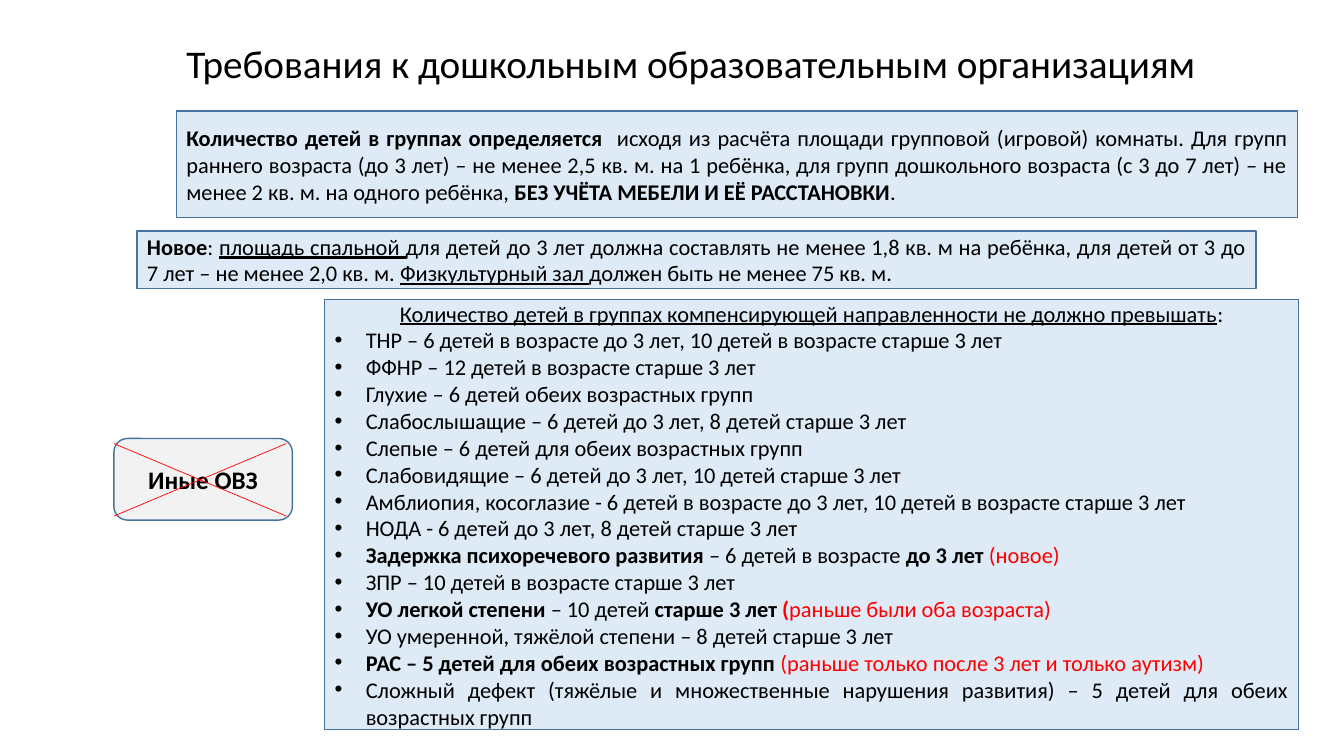
from dataclasses import dataclass

import lxml.etree
import pptx
import pptx.dml.color
import pptx.enum.shapes
import pptx.enum.text
import pptx.oxml.ns
import pptx.util

Inches = pptx.util.Inches
Align = pptx.enum.text.PP_ALIGN
Preset = pptx.enum.shapes.MSO_SHAPE

COLORS = {
    "text": "000000",
    "accent": "FF0000",
    "panel": "DEEBF7",
    "badge": "F2F2F2",
    "border": "43739E",
}
FONT = "Calibri"
BULLET_INDENT = Inches(0.31)


@dataclass
class Run:
    text: str
    bold: bool = False
    underline: bool = False
    color: str = "text"


@dataclass
class Line:
    runs: list[Run]
    align: Align = Align.JUSTIFY
    bullet: bool = False
    spacing: float = 1.0


@dataclass
class Panel:
    left: float
    top: float
    width: float
    height: float
    lines: list[Line]
    size: int = 16
    preset: Preset = Preset.RECTANGLE
    fill: str = "panel"


def rgb(name: str) -> pptx.dml.color.RGBColor:
    return pptx.dml.color.RGBColor.from_string(COLORS[name])


def add_bullet(paragraph) -> None:
    properties = paragraph._p.get_or_add_pPr()
    properties.set("marL", str(BULLET_INDENT))
    properties.set("indent", str(-BULLET_INDENT))
    font = lxml.etree.SubElement(properties, pptx.oxml.ns.qn("a:buFont"))
    font.set("typeface", "Arial")
    character = lxml.etree.SubElement(properties, pptx.oxml.ns.qn("a:buChar"))
    character.set("char", "•")


def write_lines(text_frame, lines: list[Line], size: int) -> None:
    text_frame.word_wrap = True
    text_frame.vertical_anchor = pptx.enum.text.MSO_ANCHOR.MIDDLE
    for index, line in enumerate(lines):
        paragraph = text_frame.add_paragraph() if index else text_frame.paragraphs[0]
        paragraph.alignment = line.align
        paragraph.line_spacing = line.spacing
        if line.bullet:
            add_bullet(paragraph)
        for part in line.runs:
            run = paragraph.add_run()
            run.text = part.text
            run.font.name = FONT
            run.font.size = pptx.util.Pt(size)
            run.font.bold = part.bold
            run.font.underline = part.underline
            run.font.color.rgb = rgb(part.color)


def add_panel(slide, panel: Panel) -> None:
    shape = slide.shapes.add_shape(
        panel.preset, Inches(panel.left), Inches(panel.top),
        Inches(panel.width), Inches(panel.height))
    shape.shadow.inherit = False
    shape.fill.solid()
    shape.fill.fore_color.rgb = rgb(panel.fill)
    shape.line.color.rgb = rgb("border")
    shape.line.width = pptx.util.Pt(1)
    write_lines(shape.text_frame, panel.lines, panel.size)


def add_stroke(slide, left: float, top: float, right: float, bottom: float) -> None:
    connector = slide.shapes.add_connector(
        pptx.enum.shapes.MSO_CONNECTOR.STRAIGHT,
        Inches(left), Inches(top), Inches(right), Inches(bottom))
    connector.line.color.rgb = rgb("accent")
    connector.line.width = pptx.util.Pt(0.5)
    lxml.etree.SubElement(connector._element.spPr, pptx.oxml.ns.qn("a:effectLst"))


TITLE = Line([Run("Требования к дошкольным образовательным организациям")],
             Align.LEFT, spacing=0.9)

GROUP_AREA = Line([
    Run("Количество детей в группах определяется  ", bold=True),
    Run("исходя из расчёта площади групповой (игровой) комнаты. Для групп раннего "
        "возраста (до 3 лет) – не менее 2,5 кв. м. на 1 ребёнка, для групп дошкольного "
        "возраста (с 3 до 7 лет) – не менее 2 кв. м. на одного ребёнка, "),
    Run("БЕЗ УЧЁТА МЕБЕЛИ И ЕЁ РАССТАНОВКИ", bold=True),
    Run("."),
])

NEW_AREA = Line([
    Run("Новое", bold=True),
    Run(": "),
    Run("площадь спальной ", underline=True),
    Run("для детей до 3 лет должна составлять не менее 1,8 кв. м на ребёнка, "
        "для детей от 3 до 7 лет – не менее 2,0 кв. м. "),
    Run("Физкультурный зал ", underline=True),
    Run("должен быть не менее 75 кв. м."),
])

LIMITS_HEADING = Line([
    Run("Количество детей в группах компенсирующей направленности не должно превышать",
        underline=True),
    Run(":"),
], Align.CENTER)

LIMITS = [
    [Run("ТНР – 6 детей в возрасте до 3 лет, 10 детей в возрасте старше 3 лет")],
    [Run("ФФНР – 12 детей в возрасте старше 3 лет")],
    [Run("Глухие – 6 детей обеих возрастных групп")],
    [Run("Слабослышащие – 6 детей до 3 лет, 8 детей старше 3 лет")],
    [Run("Слепые – 6 детей для обеих возрастных групп")],
    [Run("Слабовидящие – 6 детей до 3 лет, 10 детей старше 3 лет")],
    [Run("Амблиопия, косоглазие - 6 детей в возрасте до 3 лет, "
         "10 детей в возрасте старше 3 лет")],
    [Run("НОДА - 6 детей до 3 лет, 8 детей старше 3 лет")],
    [Run("Задержка психоречевого развития ", bold=True), Run("– 6 детей в возрасте "),
     Run("до 3 лет ", bold=True), Run("(новое)", color="accent")],
    [Run("ЗПР – 10 детей в возрасте старше 3 лет")],
    [Run("УО легкой степени ", bold=True), Run("– 10 детей "),
     Run("старше 3 лет ", bold=True), Run("(", bold=True, color="accent"),
     Run("раньше были оба возраста)", color="accent")],
    [Run("УО умеренной, тяжёлой степени – 8 детей старше 3 лет")],
    [Run("РАС – 5 детей для обеих возрастных групп ", bold=True),
     Run("(раньше только после 3 лет и только аутизм)", color="accent")],
    [Run("Сложный дефект (тяжёлые и множественные нарушения развития) – "
         "5 детей для обеих возрастных групп")],
]

PANELS = [
    Panel(1.75, 1.1, 11.12, 1.06, [GROUP_AREA]),
    Panel(1.36, 2.29, 11.1, 0.57, [NEW_AREA]),
    Panel(3.22, 2.97, 9.66, 4.27,
          [LIMITS_HEADING] + [Line(runs, bullet=True) for runs in LIMITS]),
    Panel(1.13, 4.35, 1.77, 0.81, [Line([Run("Иные ОВЗ", bold=True)], Align.CENTER)],
          18, Preset.ROUNDED_RECTANGLE, "badge"),
]


def main() -> None:
    presentation = pptx.Presentation()
    presentation.slide_width = Inches(13.33)
    presentation.slide_height = Inches(7.5)
    slide = presentation.slides.add_slide(presentation.slide_layouts[6])

    # Title
    title = slide.shapes.add_textbox(
        Inches(1.75), Inches(0.33), Inches(10.96), Inches(0.65))
    write_lines(title.text_frame, [TITLE], 28)

    # Requirement panels and the badge
    for panel in PANELS:
        add_panel(slide, panel)

    # Cross over the badge
    add_stroke(slide, 1.13, 4.4, 2.84, 5.12)
    add_stroke(slide, 2.84, 4.4, 1.13, 5.12)

    presentation.save("out.pptx")


if __name__ == "__main__":
    main()
